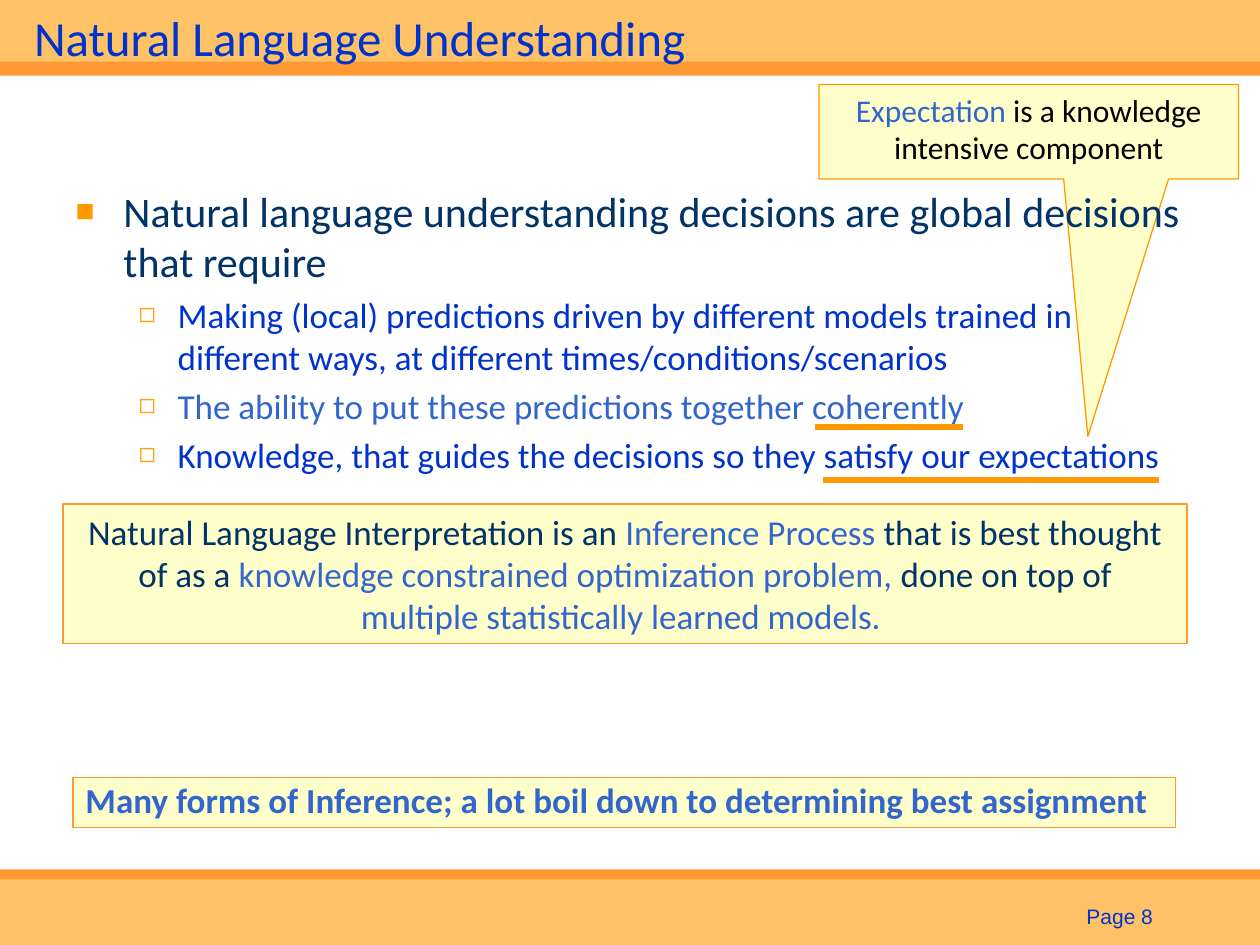
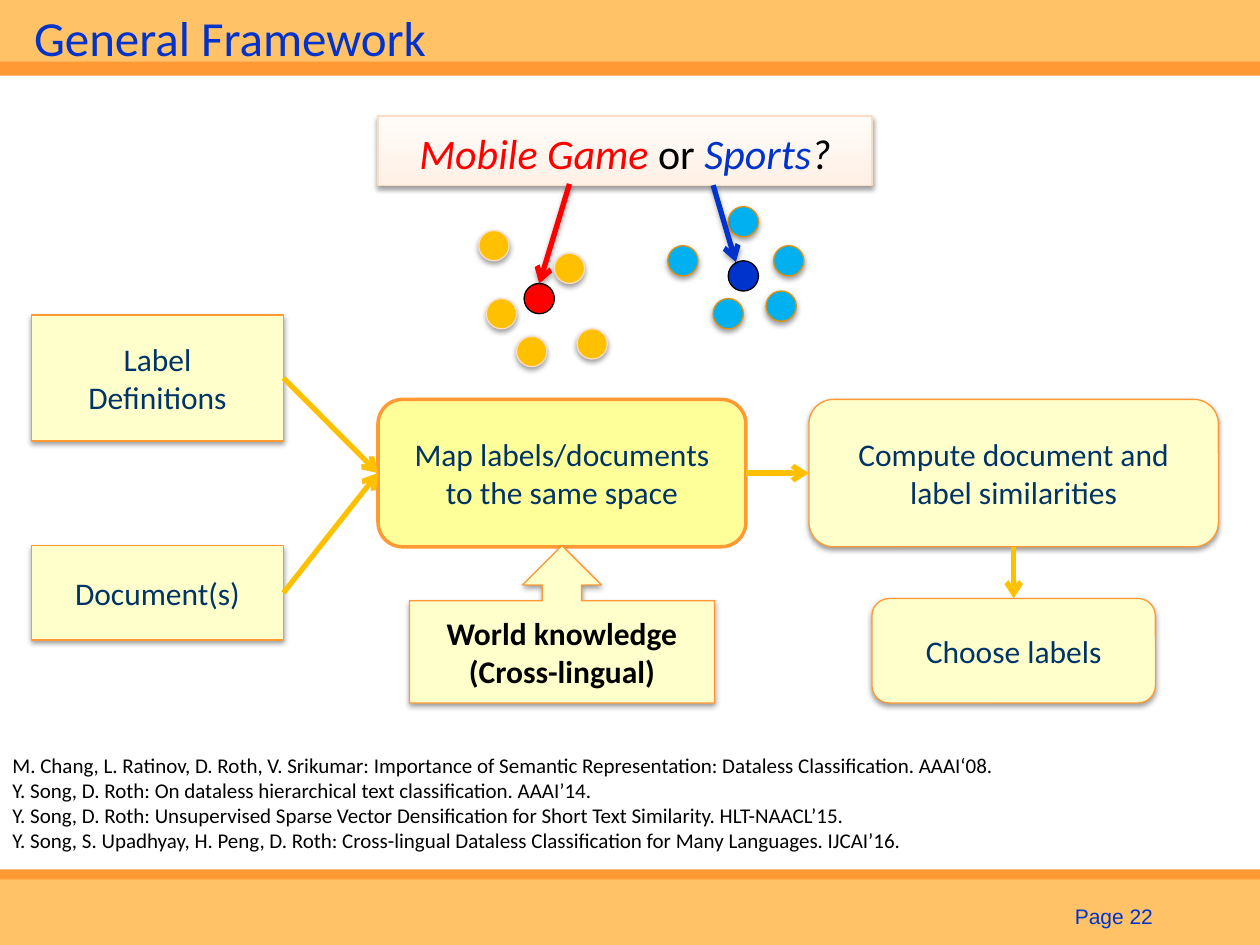
from lxml import etree
from pptx import Presentation
from pptx.dml.color import RGBColor
from pptx.enum.shapes import MSO_CONNECTOR, MSO_SHAPE
from pptx.enum.text import MSO_ANCHOR, MSO_AUTO_SIZE, PP_ALIGN
from pptx.oxml.ns import qn
from pptx.util import Inches, Pt

LEFT, MID, RIGHT = PP_ALIGN.LEFT, PP_ALIGN.CENTER, PP_ALIGN.RIGHT
TOP, CENTER, BOTTOM = MSO_ANCHOR.TOP, MSO_ANCHOR.MIDDLE, MSO_ANCHOR.BOTTOM
RECT, ROUND = MSO_SHAPE.RECTANGLE, MSO_SHAPE.ROUNDED_RECTANGLE
PROCESS, OVAL = MSO_SHAPE.FLOWCHART_ALTERNATE_PROCESS, MSO_SHAPE.OVAL
BUBBLE, UP_BOX = MSO_SHAPE.RECTANGULAR_CALLOUT, MSO_SHAPE.UP_ARROW_CALLOUT
STRAIGHT = MSO_CONNECTOR.STRAIGHT

BLACK = RGBColor(0, 0, 0)
NAVY = RGBColor(0x00, 0x33, 0x66)
BLUE = RGBColor(0x00, 0x33, 0xCC)
SOFT = RGBColor(0x33, 0x66, 0xCC)
SKY = RGBColor(0x00, 0xB0, 0xF0)
RED = RGBColor(0xFF, 0, 0)
GOLD = RGBColor(0xFF, 0xC0, 0x00)
ORANGE = RGBColor(0xFF, 0x99, 0x33)
AMBER = RGBColor(0xFF, 0x99, 0x00)
OCHRE = RGBColor(0xE3, 0x91, 0x0A)
PEACH = RGBColor(0xFF, 0xC2, 0x66)
BLUSH = RGBColor(0xFB, 0xDD, 0xC4)
CREAM = RGBColor(0xFF, 0xFF, 0xCC)
LEMON = RGBColor(0xFF, 0xFF, 0x99)
PALE = RGBColor(0xFF, 0xF1, 0xE6)
MILK = RGBColor(0xFF, 0xFB, 0xF8)

WIDE, HIGH = 10, 7.5

# Shared bands: top, height, colour
BANDS = [(6.9, 0.6, ORANGE), (0, 0.6, ORANGE), (0, 0.49, PEACH), (6.98, 0.52, PEACH)]

# Slide 1: a paragraph is a list of (text, colour) runs
HINT = [[("Expectation ", SOFT), ("is a knowledge intensive component", BLACK)]]
POINTS = [
    (0, "Natural language understanding decisions are global decisions that require", NAVY),
    (1, "Making (local) predictions driven by different models trained in "
        "different ways, at different times/conditions/scenarios", BLUE),
    (1, "The ability to put these predictions together coherently", SOFT),
    (1, "Knowledge, that guides the decisions so they satisfy our expectations", BLUE),
]
# Bullet levels: size, margin, hang, mark, mark colour, mark percent
LEVELS = [(24, 0.38, 0.38, "■", "FF9900", 75), (20, 0.81, 0.31, "◻", "FBA313", 80)]
CLAIM = [[
    ("Natural Language Interpretation is an ", NAVY), ("Inference Process ", SOFT),
    ("that is best thought of as a ", NAVY),
    ("knowledge constrained optimization problem, ", SOFT),
    ("done on top of ", NAVY), ("multiple statistically learned models. ", SOFT),
]]
FORMS = "Many forms of Inference; a lot boil down to determining best assignment"
RULES = [(6.47, 7.64, 3.39), (6.53, 9.2, 3.81)]

# Slide 2: name -> shape, place, words, format
STEPS = {
    "doc": (RECT, (0.25, 4.33, 2, 0.75), ["Document(s)"], {}),
    "label": (RECT, (0.25, 2.5, 2, 1), ["Label", "Definitions"], {}),
    "map": (PROCESS, (3, 3.17, 2.92, 1.17), ["Map labels/documents to the same space"],
            {"fill": LEMON, "width": 2, "shade": False}),
    "score": (ROUND, (6.42, 3.17, 3.25, 1.17),
              ["Compute document and label similarities"], {}),
    "pick": (ROUND, (6.92, 4.75, 2.25, 0.83), ["Choose labels"], {}),
}
# Links: from, side, to, side (0 top, 1 left, 2 bottom, 3 right)
LINKS = [("label", 3, "map", 1), ("doc", 3, "map", 1),
         ("map", 3, "score", 1), ("score", 2, "pick", 0)]
DOT = 0.24
# Dot sets: fill, line, shadow, corners
DOTS = [
    (BLUE, BLACK, False, [(5.78, 2.07)]),
    (RED, BLACK, False, [(4.16, 2.25)]),
    (SKY, OCHRE, True,
     [(6.08, 2.31), (5.66, 2.37), (6.14, 1.95), (5.78, 1.64), (5.3, 1.95)]),
    (GOLD, BLUSH, True,
     [(4.4, 2.01), (3.86, 2.37), (4.1, 2.67), (3.8, 1.83), (4.58, 2.61)]),
]
QUERY = [[("Mobile Game ", RED, True), ("or ", BLACK), ("Sports", BLUE, True),
          ("?", BLACK, True)]]
PICKS = [((4.52, 1.46), (4.28, 2.25), RED), ((5.66, 1.47), (5.84, 2.08), BLUE)]
WORLD = ["World knowledge", "(Cross-lingual)"]
PAPERS = [
    "M. Chang, L. Ratinov, D. Roth, V. Srikumar: Importance of Semantic "
    "Representation: Dataless Classification. AAAI‘08.",
    "Y. Song, D. Roth: On dataless hierarchical text classification. AAAI’14.",
    "Y. Song, D. Roth: Unsupervised Sparse Vector Densification for Short Text "
    "Similarity. HLT-NAACL’15.",
    "Y. Song, S. Upadhyay, H. Peng, D. Roth: Cross-lingual Dataless Classification "
    "for Many Languages. IJCAI’16.",
]


def place(spot):
    return [Inches(n) for n in spot]


def node(root, tag, **attrs):
    return etree.SubElement(root, qn(tag), {k: str(v) for k, v in attrs.items()})


def write(shape, paras, size=18, color=NAVY, bold=False, align=MID, anchor=TOP,
          font="Calibri", lead=None):
    """Fill a shape with paragraphs, each a string or a list of runs."""
    frame = shape.text_frame
    frame.word_wrap, frame.vertical_anchor = True, anchor
    frame.auto_size = MSO_AUTO_SIZE.NONE
    for i, runs in enumerate(paras):
        para = frame.add_paragraph() if i else frame.paragraphs[0]
        para.alignment, para.space_before = align, Pt(0)
        if lead:
            para.line_spacing = lead
        for text, tint, *slant in [(runs, color)] if isinstance(runs, str) else runs:
            run = para.add_run()
            run.text = text
            face = run.font
            face.name, face.size, face.bold = font, Pt(size), bold
            face.italic = bool(slant)
            face.color.rgb = tint
    return shape


def cast(fx, dist=20000, alpha=38000):
    shade = node(fx, "a:outerShdw", blurRad=40000, dist=dist, dir=5400000, rotWithShape=0)
    node(node(shade, "a:srgbClr", val="000000"), "a:alpha", val=alpha)


def draw(slide, kind, spot, fill=CREAM, line=ORANGE, width=0.75, shade=False):
    shape = slide.shapes.add_shape(kind, *place(spot))
    shape.shadow.inherit = False
    shape.fill.solid()
    shape.fill.fore_color.rgb = fill
    if line is None:
        shape.line.fill.background()
    else:
        shape.line.color.rgb, shape.line.width = line, Pt(width)
    if shade:
        cast(shape._element.spPr.find(qn("a:effectLst")))
    return shape


def link(slide, start, end, color, arrow=True, shade=False):
    wire = slide.shapes.add_connector(STRAIGHT, *place(start + end))
    wire.line.color.rgb, wire.line.width = color, Pt(3)
    if arrow:
        node(wire.line._get_or_add_ln(), "a:tailEnd", type="arrow")
    fx = node(wire._element.spPr, "a:effectLst")
    if shade:
        cast(fx, 23000, 35000)
    return wire


def text_box(slide, spot, paras, **form):
    return write(slide.shapes.add_textbox(*place(spot)), paras, **form)


def put(shape, spot):
    shape.left, shape.top, shape.width, shape.height = place(spot)


def start(prs, layout, title, page):
    slide = prs.slides.add_slide(prs.slide_layouts[layout])
    head = slide.shapes.title
    put(head, (0.17, 0, 9, 0.58))
    write(head, [title], size=28, color=BLUE, align=LEFT, anchor=CENTER)
    text_box(slide, (8.25, 7.17, 1, 0.25), [f"Page {page}"], size=12, color=BLUE,
             align=RIGHT, anchor=BOTTOM, font="Arial")
    return slide


def add_bands(prs, slide):
    """Draw the bands once and hand them to the slide master."""
    tree = prs.slide_master.shapes._spTree
    for i, (top, high, color) in enumerate(BANDS):
        band = draw(slide, RECT, (0, top, WIDE, high), color, None)._element
        band.nvSpPr.cNvPr.set("id", str(100 + i))
        tree.insert(2 + i, band)


def bullet(para, level):
    size, margin, hang, mark, color, share = LEVELS[level]
    para.level = level
    props = para._p.get_or_add_pPr()
    props.set("marL", str(Inches(margin)))
    props.set("indent", str(-Inches(hang)))
    node(node(props, "a:buClr"), "a:srgbClr", val=color)
    node(props, "a:buSzPct", val=share * 1000)
    node(props, "a:buFont", typeface="Arial")
    node(props, "a:buChar", char=mark)
    for run in para.runs:
        run.font.size = Pt(size)


def language(prs):
    slide = start(prs, 1, "Natural Language Understanding", 8)
    add_bands(prs, slide)

    # Callout behind the bullets
    hint = draw(slide, BUBBLE, (6.5, 0.67, 3.33, 0.75), line=AMBER)
    hint.adjustments[0], hint.adjustments[1] = 0.141, 3.224
    write(hint, HINT)
    slide.shapes._spTree.insert(2, hint._element)

    # Bullets
    body = slide.placeholders[1]
    put(body, (0.5, 1.42, 9, 5.42))
    write(body, [[(text, color)] for _, text, color in POINTS], align=LEFT)
    for i, (para, point) in enumerate(zip(body.text_frame.paragraphs, POINTS)):
        bullet(para, point[0])
        para.space_before = Pt(4 if i else 0)

    # Boxed claims and underlines
    write(draw(slide, RECT, (0.5, 4, 8.92, 1.11)), CLAIM, size=20)
    write(draw(slide, RECT, (0.58, 6.17, 8.75, 0.4)), [FORMS], size=20, color=SOFT,
          bold=True, align=LEFT, lead=0.9)
    for left, right, y in RULES:
        link(slide, (left, y), (right, y), AMBER, arrow=False)


def framework(prs):
    slide = start(prs, 5, "General Framework", 22)

    # Steps and the arrows that join them
    boxes = {}
    for name, (kind, spot, words, form) in STEPS.items():
        box = draw(slide, kind, spot, **{"shade": True, **form})
        boxes[name] = write(box, words, anchor=CENTER)
    for here, out, there, into in LINKS:
        wire = link(slide, (0, 0), (1, 1), GOLD)
        wire.begin_connect(boxes[here], out)
        wire.end_connect(boxes[there], into)
    world = draw(slide, UP_BOX, (3.25, 4.33, 2.42, 1.25), shade=True)
    write(world, WORLD, color=BLACK, bold=True, anchor=CENTER)

    # Clusters of dots
    for fill, line, shade, spots in DOTS:
        for x, y in spots:
            draw(slide, OVAL, (x, y, DOT, DOT), fill, line, shade=shade)

    # Question and its two arrows
    query = draw(slide, RECT, (3, 0.92, 3.92, 0.55), line=BLUSH, shade=True)
    query.fill.gradient()
    query.fill.gradient_angle = 90
    for stop, color in zip(query.fill.gradient_stops, (PALE, MILK)):
        stop.color.rgb = color
    write(query, QUERY, size=24, lead=1.1)
    for tail, tip, color in PICKS:
        link(slide, tail, tip, color, shade=True)

    # References
    text_box(slide, (0, 5.92, WIDE, 0.91), PAPERS, size=12, color=BLACK, align=LEFT)


def main():
    prs = Presentation()
    prs.slide_width, prs.slide_height = Inches(WIDE), Inches(HIGH)
    language(prs)
    framework(prs)
    prs.save("out.pptx")


if __name__ == "__main__":
    main()
